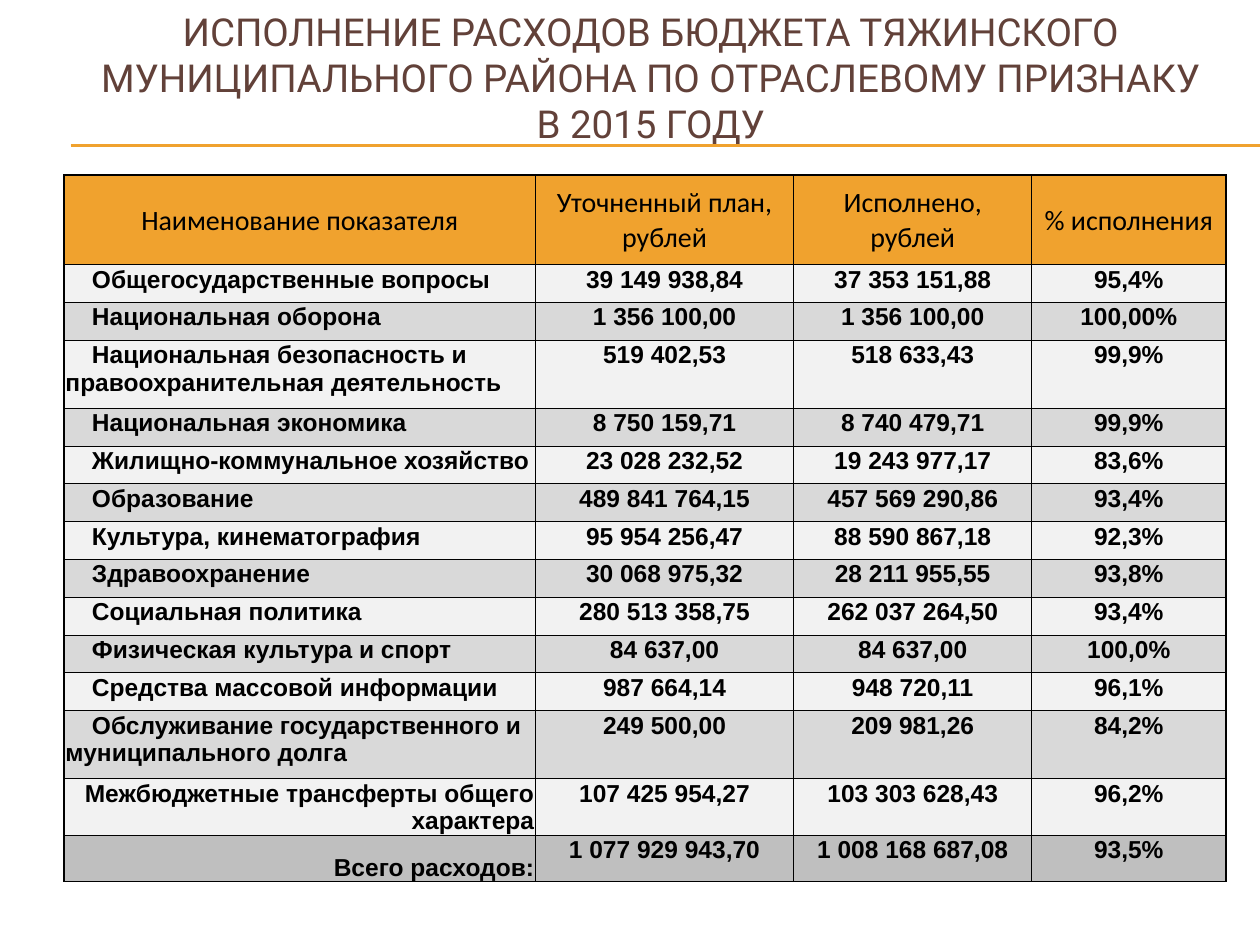
from lxml import etree
from pptx import Presentation
from pptx.dml.color import RGBColor
from pptx.enum import shapes, text
from pptx.oxml.ns import qn
from pptx.util import Inches, Pt

# Content
TITLE = ("ИСПОЛНЕНИЕ РАСХОДОВ БЮДЖЕТА ТЯЖИНСКОГО "
         "МУНИЦИПАЛЬНОГО РАЙОНА ПО ОТРАСЛЕВОМУ ПРИЗНАКУ\vВ 2015 ГОДУ")
HEAD = ("Наименование показателя", "Уточненный план,\nрублей",
        "Исполнено,\nрублей", "% исполнения")
ITEMS = [
    ("Общегосударственные вопросы", "39 149 938,84", "37 353 151,88", "95,4%"),
    ("Национальная оборона", "1 356 100,00", "1 356 100,00", "100,00%"),
    ("Национальная безопасность и правоохранительная деятельность",
     "519 402,53", "518 633,43", "99,9%"),
    ("Национальная экономика", "8 750 159,71", "8 740 479,71", "99,9%"),
    ("Жилищно-коммунальное хозяйство", "23 028 232,52", "19 243 977,17", "83,6%"),
    ("Образование", "489 841 764,15", "457 569 290,86", "93,4%"),
    ("Культура, кинематография", "95 954 256,47", "88 590 867,18", "92,3%"),
    ("Здравоохранение", "30 068 975,32", "28 211 955,55", "93,8%"),
    ("Социальная политика", "280 513 358,75", "262 037 264,50", "93,4%"),
    ("Физическая культура и спорт", "84 637,00", "84 637,00", "100,0%"),
    ("Средства массовой информации", "987 664,14", "948 720,11", "96,1%"),
    ("Обслуживание государственного и муниципального долга",
     "249 500,00", "209 981,26", "84,2%"),
    ("Межбюджетные трансферты общего характера",
     "107 425 954,27", "103 303 628,43", "96,2%"),
]
TOTAL = ("Всего расходов:", "1 077 929 943,70", "1 008 168 687,08", "93,5%")
ROWS = [HEAD, *ITEMS, TOTAL]
LAST = len(ROWS) - 1

COLORS = {"title": "624139", "accent": "F0A22E", "ink": "000000",
          "light": "F2F2F2", "dark": "D9D9D9", "total": "BFBFBF"}
WIDTHS = (3.74, 2.05, 1.89, 1.54)
TALL = {0: 0.71, 3: 0.54, 12: 0.54, 13: 0.44, LAST: 0.37}
HEIGHTS = [TALL.get(i, 0.3) for i in range(len(ROWS))]


def rgb(name):
    return RGBColor.from_string(COLORS[name])


def style(par, font, size, color, bold=False):
    for run in par.runs:
        run.font.name, run.font.size, run.font.bold = font, Pt(size), bold
        run.font.color.rgb = rgb(color)


def border(cell, row, col):
    """Thin inner borders, a thicker outer frame."""
    outer = {"L": col == 0, "R": col == len(WIDTHS) - 1,
             "T": row == 0, "B": row == LAST}
    props = cell._tc.get_or_add_tcPr()
    for at, (side, edge) in enumerate(outer.items()):
        line = etree.Element(qn("a:ln" + side), w=str(Pt(1 if edge else 0.5)))
        fill = etree.SubElement(line, qn("a:solidFill"))
        etree.SubElement(fill, qn("a:srgbClr"), val=COLORS["ink"])
        props.insert(at, line)


def shade(row):
    if row == 0:
        return "accent"
    if row == LAST:
        return "total"
    return "light" if row % 2 else "dark"


def fill_cell(cell, row, col, words):
    cell.text_frame.text = words
    cell.margin_left = cell.margin_top = cell.margin_right = Inches(0.01)
    cell.margin_bottom = 0
    cell.fill.solid()
    cell.fill.fore_color.rgb = rgb(shade(row))
    border(cell, row, col)
    named = col == 0 and row > 0
    right = named and row >= LAST - 1
    cell.vertical_anchor = (text.MSO_ANCHOR.MIDDLE if row == 0 else
                            text.MSO_ANCHOR.BOTTOM if right else
                            text.MSO_ANCHOR.TOP)
    for par in cell.text_frame.paragraphs:
        par.alignment = (text.PP_ALIGN.RIGHT if right else
                         text.PP_ALIGN.LEFT if named else text.PP_ALIGN.CENTER)
        if named and not right:
            par._p.get_or_add_pPr().set("indent", str(Inches(0.21)))
        if row == 0:
            style(par, "Calibri", 16, "ink")
        else:
            style(par, "Arial", 14, "ink", True)


def main():
    deck = Presentation()
    deck.slide_width, deck.slide_height = Inches(10), Inches(7.5)
    slide = deck.slides.add_slide(deck.slide_layouts[5])

    # Title
    title = slide.shapes.title
    title.left, title.top = Inches(0.33), Inches(0.21)
    title.width, title.height = Inches(9.67), Inches(1.17)
    frame = title.text_frame
    frame.text = TITLE
    frame.auto_size = text.MSO_AUTO_SIZE.NONE
    frame.word_wrap = True
    frame.vertical_anchor = text.MSO_ANCHOR.MIDDLE
    frame.margin_bottom = Inches(0.42)
    frame.paragraphs[0].alignment = text.PP_ALIGN.CENTER
    style(frame.paragraphs[0], "Roboto", 22, "title")

    # Double rule under the title
    for y in (1.15, 1.16):
        rule = slide.shapes.add_connector(
            shapes.MSO_CONNECTOR.STRAIGHT,
            Inches(0.56), Inches(y), Inches(10), Inches(y))
        rule.line.color.rgb = rgb("accent")
        rule.line.width = Pt(0.75)
        etree.SubElement(rule._element.spPr, qn("a:effectLst"))

    # Budget table
    table = slide.shapes.add_table(
        len(ROWS), len(WIDTHS), Inches(0.51), Inches(1.39),
        Inches(sum(WIDTHS)), Inches(sum(HEIGHTS))).table
    for column, width in zip(table.columns, WIDTHS):
        column.width = Inches(width)
    for i, (words, height) in enumerate(zip(ROWS, HEIGHTS)):
        table.rows[i].height = Inches(height)
        for j, word in enumerate(words):
            fill_cell(table.cell(i, j), i, j, word)

    deck.save("out.pptx")


if __name__ == "__main__":
    main()
